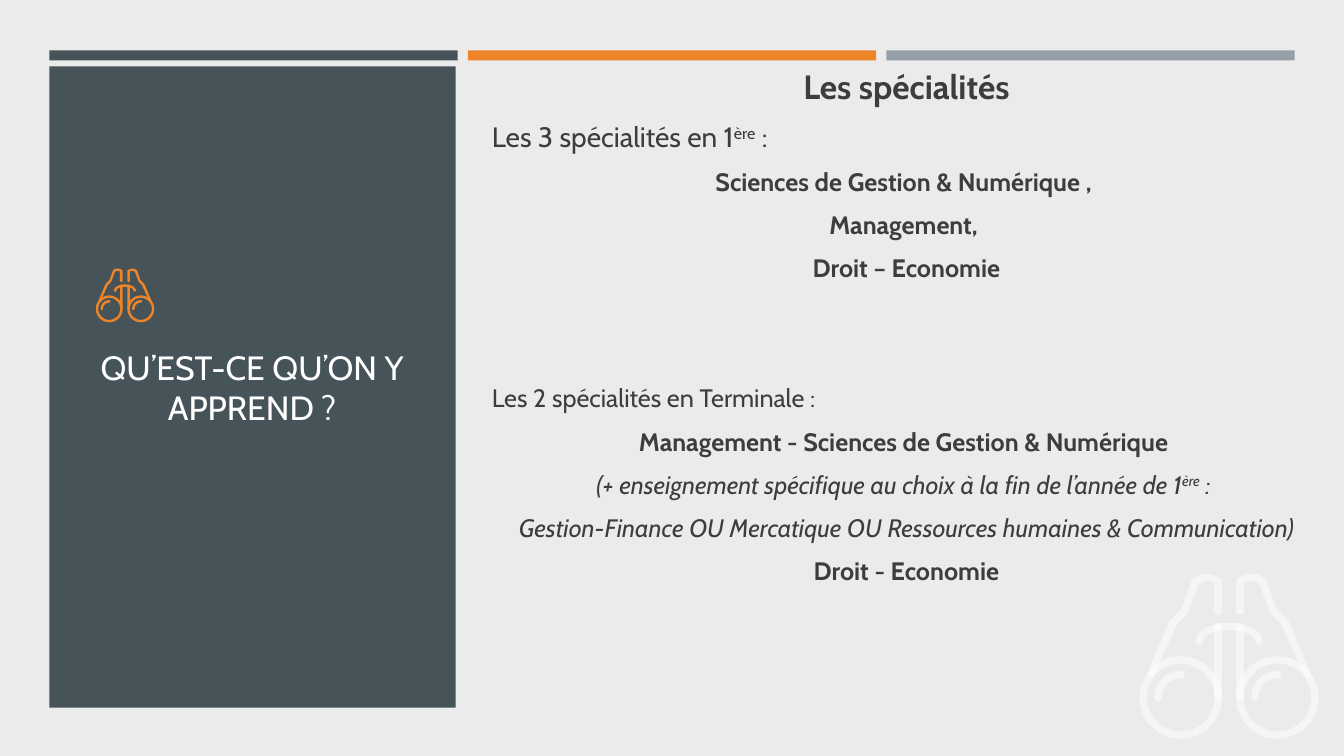
from dataclasses import dataclass
from math import cos, radians, sin

from pptx import Presentation
from pptx.dml.color import RGBColor
from pptx.enum.shapes import MSO_SHAPE
from pptx.enum.text import MSO_ANCHOR, MSO_AUTO_SIZE, PP_ALIGN
from pptx.oxml.ns import qn
from pptx.util import Emu, Pt

RECT = MSO_SHAPE.RECTANGLE
ROUND = MSO_SHAPE.ROUNDED_RECTANGLE
DONUT = MSO_SHAPE.DONUT
LEFT, CENTER = PP_ALIGN.LEFT, PP_ALIGN.CENTER
TOP, MIDDLE = MSO_ANCHOR.TOP, MSO_ANCHOR.MIDDLE
NO_FIT = MSO_AUTO_SIZE.NONE

SCALE = 9144  # EMU per px, 100 px to the inch
FONT = "Cabin"
SLATE, ORANGE, GREY = "465359", "ED8428", "969FA7"
WHITE, INK, PAPER = "FFFFFF", "3D3D3D", "EBEBEB"

Point = tuple[float, float]


@dataclass
class Line:
    text: str
    size: int = 18
    bold: bool = False
    italic: bool = False
    align: int = CENTER
    before: float = 3.2


@dataclass
class Icon:
    left: int
    top: int
    width: int
    color: str
    alpha: int


LINES = [
    Line("Les spécialités", size=24, bold=True, before=0),
    Line("Les 3 spécialités en 1^ère^ :", size=20, align=LEFT, before=4),
    Line("Sciences de Gestion & Numérique , ", bold=True),
    Line("Management, ", bold=True),
    Line("Droit – Economie", bold=True),
    Line("Les 2 spécialités en Terminale :", align=LEFT, before=65.4),
    Line("Management - Sciences de Gestion & Numérique ", bold=True),
    Line("(+ enseignement spécifique au choix à la fin de l’année de 1^ère^ : ",
         italic=True),
    Line("Gestion-Finance OU Mercatique OU Ressources humaines & Communication)",
         italic=True),
    Line("Droit - Economie", bold=True),
]

# Binoculars are drawn on a grid 178 units wide; the right half mirrors the left.
SPAN = 178
ICONS = [Icon(1130, 568, 178, WHITE, 50), Icon(95, 266, 58, ORANGE, 100)]
BARREL = [
    (8, 100), (30, 48), (31, 47), (42, 36), (52, 8), (53, 6), (60, 2), (67, 1),
    (75, 3), (81, 6), (82, 9), (82, 39), (81, 41), (78, 42), (75, 41), (74, 39),
    (74, 10), (67, 8), (59, 11), (48, 40), (47, 41), (37, 52), (14, 103),
    (11, 105), (8, 104),
]


def px(value: float) -> Emu:
    return Emu(round(value * SCALE))


def rgb(color: str) -> RGBColor:
    return RGBColor.from_string(color)


def paint(shape, color: str, alpha: int = 100) -> None:
    shape.shadow.inherit = False
    shape.line.fill.background()
    shape.fill.solid()
    shape.fill.fore_color.rgb = rgb(color)
    if alpha < 100:
        tone = shape.fill._xPr.find(qn("a:solidFill"))[0]
        tone.makeelement(qn("a:alpha"), {})
        node = tone.makeelement(qn("a:alpha"), {"val": str(alpha * 1000)})
        tone.append(node)


def block(shapes, kind: int, left: float, top: float, width: float,
          height: float, color: str, alpha: int = 100):
    shape = shapes.add_shape(kind, px(left), px(top), px(width), px(height))
    paint(shape, color, alpha)
    return shape


def write(para, text: str, size: int = 18, color: str = INK,
          bold: bool = False, italic: bool = False) -> None:
    """Add runs to a paragraph; text between ^ marks is superscript."""
    for place, part in enumerate(text.split("^")):
        run = para.add_run()
        run.text = part
        font = run.font
        font.name, font.size = FONT, Pt(size)
        font.bold, font.italic = bold, italic
        font.color.rgb = rgb(color)
        if place % 2:
            run._r.get_or_add_rPr().set("baseline", "30000")


def frame(shape, left: int, top: int, width: int, height: int, anchor: int):
    shape.left, shape.top = px(left), px(top)
    shape.width, shape.height = px(width), px(height)
    body = shape.text_frame
    body.word_wrap = True
    body.auto_size = NO_FIT
    body.vertical_anchor = anchor
    return body


def arc(x: float, y: float, wide: float, high: float,
        start: int, end: int) -> list[Point]:
    turns = [radians(start + (end - start) * i / 16) for i in range(17)]
    return [(x + wide * cos(t), y + high * sin(t)) for t in turns]


def band(x: float, y: float, wide: float, high: float, end: int) -> list[Point]:
    """Outline a round-ended curved stroke from 180 degrees to the end angle."""
    half = 3.75
    tip = arc(x, y, wide, high, end, end)[0]
    return (arc(x, y, wide + half, high + half, 180, end)
            + arc(*tip, half, half, end, end + 180)
            + arc(x, y, wide - half, high - half, end, 180)
            + arc(x - wide, y, half, half, 0, 180))


def draw(shapes, icon: Icon) -> None:
    group = shapes.add_group_shape().shapes
    ratio = icon.width / SPAN

    def trace(points: list[Point]) -> None:
        spots = [(px(icon.left + x * ratio), px(icon.top + y * ratio))
                 for x, y in points]
        pen = group.build_freeform(*spots[0], scale=1.0)
        pen.add_line_segments(spots[1:], close=True)
        paint(pen.convert_to_shape(), icon.color, icon.alpha)

    def place(kind: int, x: float, y: float, wide: float, high: float,
              adjust: float) -> None:
        shape = block(group, kind, icon.left + x * ratio, icon.top + y * ratio,
                      wide * ratio, high * ratio, icon.color, icon.alpha)
        shape.adjustments[0] = adjust

    for shift in (0, 96):
        place(DONUT, shift, 83, 82, 82, 0.09)
        trace([(x + shift, y) for x, y in band(41, 124, 22.5, 22.5, 270)])
    for x in (74, 96):
        place(ROUND, x, 50, 8, 77, 0.5)
    trace(BARREL)
    trace([(SPAN - x, y) for x, y in BARREL])
    trace(band(89, 68, 29.5, 14.5, 360))


def main() -> None:
    deck = Presentation()
    deck.slide_width, deck.slide_height = px(1333), px(750)
    slide = deck.slides.add_slide(deck.slide_layouts[5])
    slide.background.fill.solid()
    slide.background.fill.fore_color.rgb = rgb(PAPER)
    shapes = slide.shapes

    for column, color in enumerate((SLATE, ORANGE, GREY)):
        block(shapes, RECT, 49 + 415 * column, 50, 405, 10, color)
    block(shapes, RECT, 49, 66, 403, 636, SLATE)

    title = shapes.title
    shapes._spTree.append(title._element)  # bring in front of the panel
    para = frame(title, 84, 290, 332, 188, MIDDLE).paragraphs[0]
    para.alignment = CENTER
    write(para, "QU’EST-CE QU’ON Y APPREND ?", size=24, color=WHITE)

    area = (478, 60, 842, 545)
    body = frame(shapes.add_textbox(*map(px, area)), *area, TOP)
    for index, line in enumerate(LINES):
        para = body.add_paragraph() if index else body.paragraphs[0]
        para.alignment = line.align
        para.space_before, para.space_after = Pt(line.before), Pt(6)
        write(para, line.text, size=line.size, bold=line.bold, italic=line.italic)

    for icon in ICONS:
        draw(shapes, icon)
    deck.save("out.pptx")


if __name__ == "__main__":
    main()
